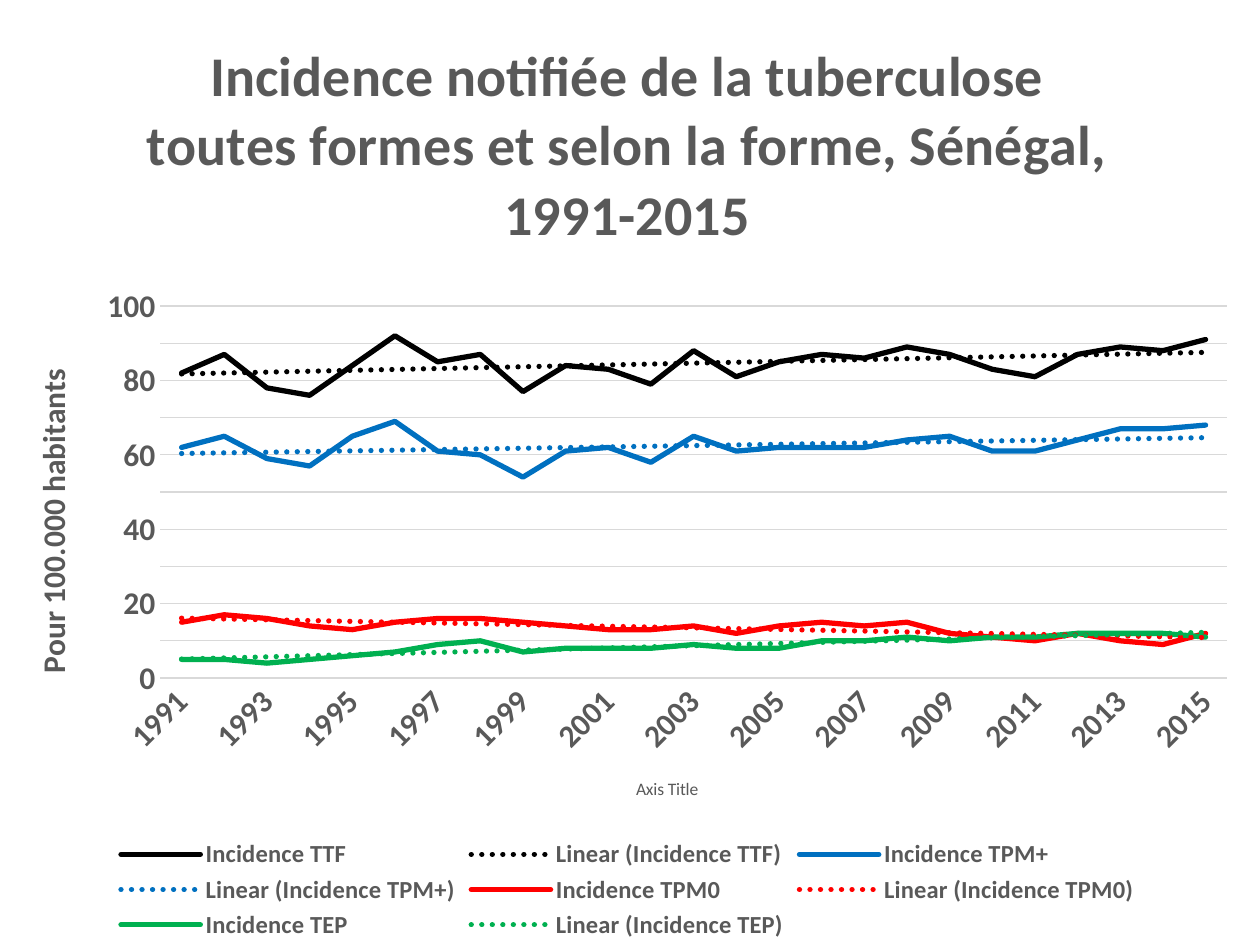
from dataclasses import dataclass

from lxml import etree
from pptx import Presentation
from pptx.chart.data import CategoryChartData
from pptx.dml.color import RGBColor
from pptx.enum.chart import XL_CHART_TYPE, XL_LEGEND_POSITION, XL_MARKER_STYLE, XL_TICK_MARK
from pptx.oxml import parse_xml
from pptx.oxml.ns import nsdecls, qn
from pptx.util import Emu, Pt

LINE = XL_CHART_TYPE.LINE
BOTTOM = XL_LEGEND_POSITION.BOTTOM
NO_MARK = XL_MARKER_STYLE.NONE
NO_TICK = XL_TICK_MARK.NONE

DPI = 126
GREY = "595959"
PALE = "D9D9D9"
FACE = "Calibri"
THICK = 3
YEARS = range(1991, 2016)


@dataclass(frozen=True)
class Curve:
    name: str
    color: str
    rates: tuple[int, ...]


CURVES = (
    Curve("Incidence TTF", "000000",
          (82, 87, 78, 76, 84, 92, 85, 87, 77, 84, 83, 79, 88,
           81, 85, 87, 86, 89, 87, 83, 81, 87, 89, 88, 91)),
    Curve("Incidence TPM+", "0070C0",
          (62, 65, 59, 57, 65, 69, 61, 60, 54, 61, 62, 58, 65,
           61, 62, 62, 62, 64, 65, 61, 61, 64, 67, 67, 68)),
    Curve("Incidence TPM0", "FF0000",
          (15, 17, 16, 14, 13, 15, 16, 16, 15, 14, 13, 13, 14,
           12, 14, 15, 14, 15, 12, 11, 10, 12, 10, 9, 12)),
    Curve("Incidence TEP", "00B050",
          (5, 5, 4, 5, 6, 7, 9, 10, 7, 8, 8, 8, 9,
           8, 8, 10, 10, 11, 10, 11, 11, 12, 12, 12, 11)),
)


def px(count: int) -> Emu:
    return Emu(round(count * 914400 / DPI))


def paint(target, color: str) -> None:
    target.rgb = RGBColor.from_string(color)


def style(font, size: int, bold: bool = True, color: str = GREY) -> None:
    font.size = Pt(size)
    font.bold = bold
    font.name = FACE
    paint(font.color, color)


def write(frame, text: str, **form) -> None:
    run = frame.paragraphs[0].add_run()
    run.text = text
    style(run.font, **form)


def stroke(line, color: str, width: float) -> None:
    line.fill.solid()
    paint(line.fill.fore_color, color)
    line.width = Pt(width)


def add_trend(series, color: str) -> None:
    trend = parse_xml(
        f'<c:trendline {nsdecls("c", "a")}><c:spPr>'
        f'<a:ln w="{Pt(THICK)}" cap="rnd"><a:solidFill><a:srgbClr val="{color}"/>'
        '</a:solidFill><a:prstDash val="sysDot"/></a:ln></c:spPr>'
        '<c:trendlineType val="linear"/><c:dispRSqr val="0"/><c:dispEq val="0"/>'
        '</c:trendline>')
    series._element.find(qn("c:cat")).addprevious(trend)


def draw_curve(series, curve: Curve) -> None:
    series.smooth = False
    series.marker.style = NO_MARK
    stroke(series.format.line, curve.color, THICK)
    series.format.line._get_or_add_ln().set("cap", "rnd")
    etree.SubElement(series.format.line._get_or_add_ln(), qn("a:round"))
    add_trend(series, curve.color)


def set_axis(axis, title: str, **form) -> None:
    axis.major_tick_mark = NO_TICK
    axis.minor_tick_mark = NO_TICK
    style(axis.tick_labels.font, 18)
    write(axis.axis_title.text_frame, title, **form)


def add_plot(slide) -> None:
    data = CategoryChartData()
    data.categories = [str(year) for year in YEARS]
    for curve in CURVES:
        data.add_series(curve.name, curve.rates)
    chart = slide.shapes.add_chart(LINE, px(3), px(0), px(1249), px(945), data).chart
    style(chart.font, 10, bold=False, color="000000")

    chart.has_title = True
    write(chart.chart_title.text_frame,
          "Incidence notifiée de la tuberculose toutes formes et selon la forme, "
          "Sénégal, 1991-2015", size=32)

    chart.has_legend = True
    chart.legend.position = BOTTOM
    chart.legend.include_in_layout = False
    style(chart.legend.font, 14)

    years = chart.category_axis
    set_axis(years, "Axis Title", size=10, bold=False)
    stroke(years.format.line, PALE, 0.75)

    rates = chart.value_axis
    set_axis(rates, "Pour 100.000 habitants", size=18)
    rates.axis_title.text_frame._txBody.bodyPr.set("rot", "-5400000")
    rates.axis_title.text_frame._txBody.bodyPr.set("vert", "horz")
    rates.minimum_scale, rates.maximum_scale, rates.major_unit = 0, 100, 10
    rates.format.line.fill.background()
    rates.has_major_gridlines = True
    stroke(rates.major_gridlines.format.line, PALE, 0.75)

    plot = chart.plots[0]
    plot.vary_by_categories = False
    for series, curve in zip(plot.series, CURVES):
        draw_curve(series, curve)


def main() -> None:
    deck = Presentation()
    deck.slide_width, deck.slide_height = px(1260), px(945)
    add_plot(deck.slides.add_slide(deck.slide_layouts[6]))
    deck.save("out.pptx")


if __name__ == "__main__":
    main()
